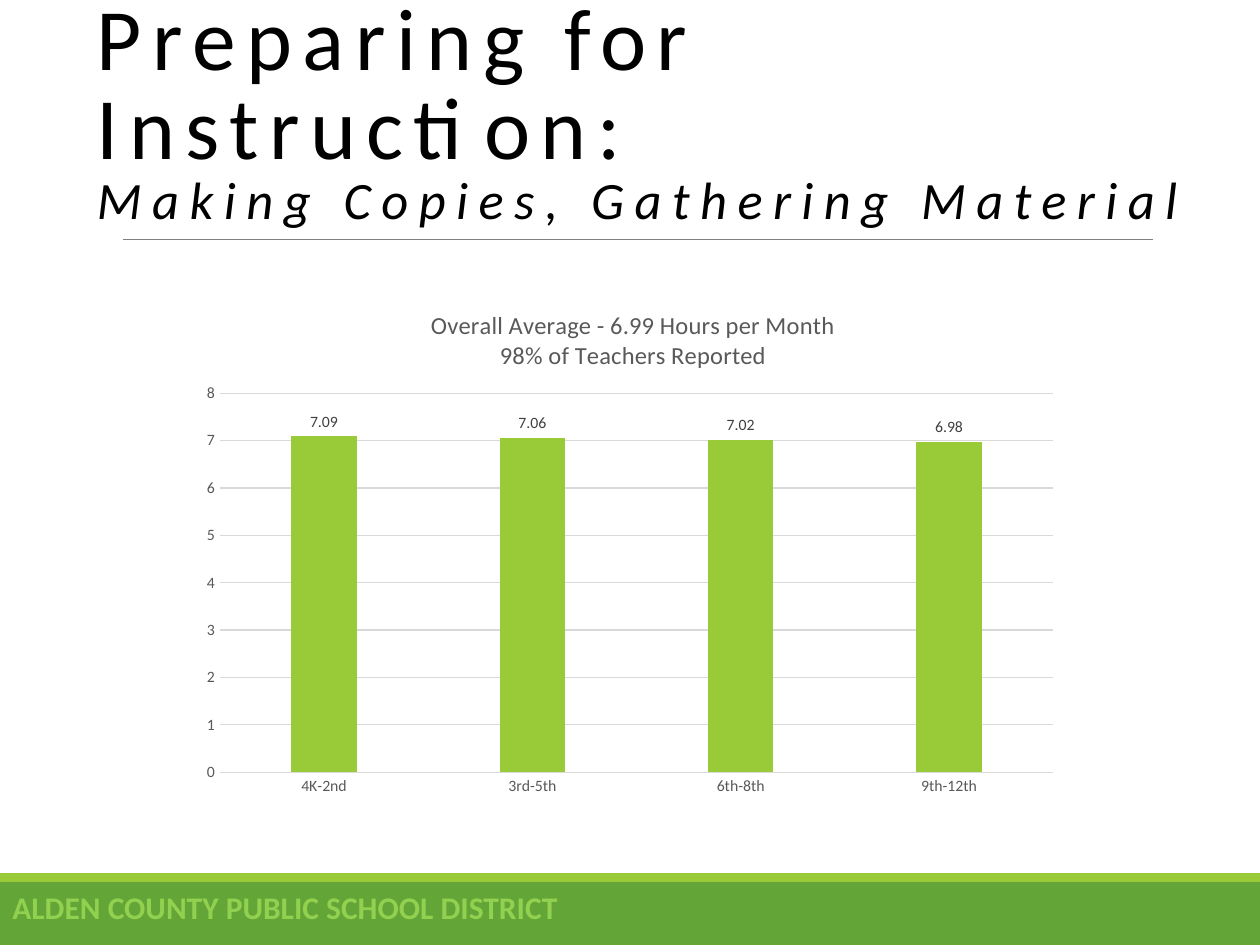
from typing import NamedTuple

from lxml import etree
from pptx import Presentation
from pptx.chart.data import CategoryChartData
from pptx.dml.color import RGBColor
from pptx.enum.chart import XL_CHART_TYPE, XL_LABEL_POSITION, XL_TICK_MARK
from pptx.enum.shapes import MSO_CONNECTOR, MSO_SHAPE
from pptx.enum.text import MSO_ANCHOR
from pptx.oxml import parse_xml
from pptx.oxml.ns import nsdecls, qn
from pptx.util import Inches, Pt

COLUMNS = XL_CHART_TYPE.COLUMN_CLUSTERED
OUTSIDE_END = XL_LABEL_POSITION.OUTSIDE_END
NO_TICK = XL_TICK_MARK.NONE
RECTANGLE = MSO_SHAPE.RECTANGLE
STRAIGHT = MSO_CONNECTOR.STRAIGHT
BOTTOM = MSO_ANCHOR.BOTTOM

FONT = "Calibri"
COLORS = {
    "footer": "63A537",
    "accent": "99CB38",
    "district": "92D050",
    "rule": "808080",
    "heading": "000000",
    "axis_text": "595959",
    "value_text": "404040",
    "grid": "D9D9D9",
}


class Band(NamedTuple):
    top: float
    height: float
    color: str


BANDS = [Band(7, 0.5, "footer"), Band(6.93, 0.07, "accent")]
HOURS = {"4K-2nd": 7.09, "3rd-5th": 7.06, "6th-8th": 7.02, "9th-12th": 6.98}
CHART_TITLE = "Overall Average - 6.99 Hours per Month\n98% of Teachers Reported"


def rgb(name: str) -> RGBColor:
    return RGBColor.from_string(COLORS[name])


def style_font(font, size: float, color: str) -> None:
    font.name = FONT
    font.size = Pt(size)
    font.color.rgb = rgb(color)


def add_band(slide, band: Band) -> None:
    bar = slide.shapes.add_shape(
        RECTANGLE, 0, Inches(band.top), Inches(10), Inches(band.height))
    bar.shadow.inherit = False
    bar.fill.solid()
    bar.fill.fore_color.rgb = rgb(band.color)
    bar.line.fill.background()


def add_rule(slide) -> None:
    rule = slide.shapes.add_connector(
        STRAIGHT, Inches(0.98), Inches(1.9), Inches(9.15), Inches(1.9))
    rule.line.color.rgb = rgb("rule")
    rule.line.width = Pt(0.5)
    etree.SubElement(rule._element.spPr, qn("a:effectLst"))


def add_text_frame(slide, left: float, top: float, width: float, height: float):
    frame = slide.shapes.add_textbox(
        Inches(left), Inches(top), Inches(width), Inches(height)).text_frame
    frame.word_wrap = True
    return frame


def add_heading(slide) -> None:
    frame = add_text_frame(slide, 0.67, 0.33, 9.33, 1.55)
    frame.vertical_anchor = BOTTOM
    heading = frame.paragraphs[0]
    heading.line_spacing = 0.85
    topic = heading.add_run()
    topic.text = "Preparing for Instruction:"
    heading.add_line_break()
    detail = heading.add_run()
    detail.text = "Making Copies, Gathering Material"
    detail.font.italic = True
    for run, size in ((topic, 50), (detail, 30)):
        style_font(run.font, size, "heading")
        run.font._element.set("spc", "600")


def add_district(slide) -> None:
    district = add_text_frame(slide, 0, 7, 10, 0.4).paragraphs[0]
    district.text = "ALDEN COUNTY PUBLIC SCHOOL DISTRICT"
    style_font(district.font, 18, "district")
    district.font.bold = True


def place(part, x: float, y: float, size: tuple = ()) -> None:
    """Fix a chart part's position, and optionally size, as chart fractions."""
    values = {"x": x, "y": y, **dict(zip("wh", size))}
    target = '<c:layoutTarget val="inner"/>' if size else ""
    modes = '<c:xMode val="edge"/><c:yMode val="edge"/>'
    numbers = "".join(f'<c:{key} val="{value}"/>' for key, value in values.items())
    layout = parse_xml(
        f'<c:layout {nsdecls("c")}><c:manualLayout>{target}{modes}{numbers}'
        "</c:manualLayout></c:layout>")
    for automatic in part.findall(qn("c:layout")):
        part.remove(automatic)
    text = part.find(qn("c:tx"))
    if text is None:
        part.insert(0, layout)
    else:
        text.addnext(layout)


def style_axes(chart) -> None:
    for axis in (chart.category_axis, chart.value_axis):
        axis.major_tick_mark = axis.minor_tick_mark = NO_TICK
        style_font(axis.tick_labels.font, 9, "axis_text")
    hours = chart.value_axis
    hours.minimum_scale, hours.maximum_scale, hours.major_unit = 0, 8, 1
    hours.format.line.fill.background()
    for line in (chart.category_axis.format.line, hours.major_gridlines.format.line):
        line.color.rgb = rgb("grid")
        line.width = Pt(0.75)


def add_hours_chart(slide) -> None:
    data = CategoryChartData()
    data.categories = list(HOURS)
    data.add_series("Series 1", list(HOURS.values()))
    chart = slide.shapes.add_chart(
        COLUMNS, Inches(1.5), Inches(2.25), Inches(7), Inches(4.15), data).chart
    style_font(chart.font, 10, "heading")
    chart.has_legend = False

    title = chart.chart_title
    title.text_frame.text = CHART_TITLE
    for line in title.text_frame.paragraphs:
        style_font(line.font, 14, "axis_text")
        line.font.bold = False
    title.include_in_layout = False
    place(title._element, 0.27, 0.04)

    style_axes(chart)
    plot = chart.plots[0]
    place(chart._chartSpace.chart.plotArea, 0.035, 0.21, (0.945, 0.725))
    plot.gap_width = 219
    plot.overlap = -27
    plot.vary_by_categories = False
    columns = plot.series[0]
    columns.format.fill.solid()
    columns.format.fill.fore_color.rgb = rgb("accent")
    labels = columns.data_labels
    labels.show_value = True
    labels.position = OUTSIDE_END
    style_font(labels.font, 9, "value_text")


def main() -> None:
    deck = Presentation()
    deck.slide_width, deck.slide_height = Inches(10), Inches(7.5)
    slide = deck.slides.add_slide(deck.slide_layouts[6])
    for band in BANDS:
        add_band(slide, band)
    add_rule(slide)
    add_heading(slide)
    add_district(slide)
    add_hours_chart(slide)
    deck.save("out.pptx")


if __name__ == "__main__":
    main()
